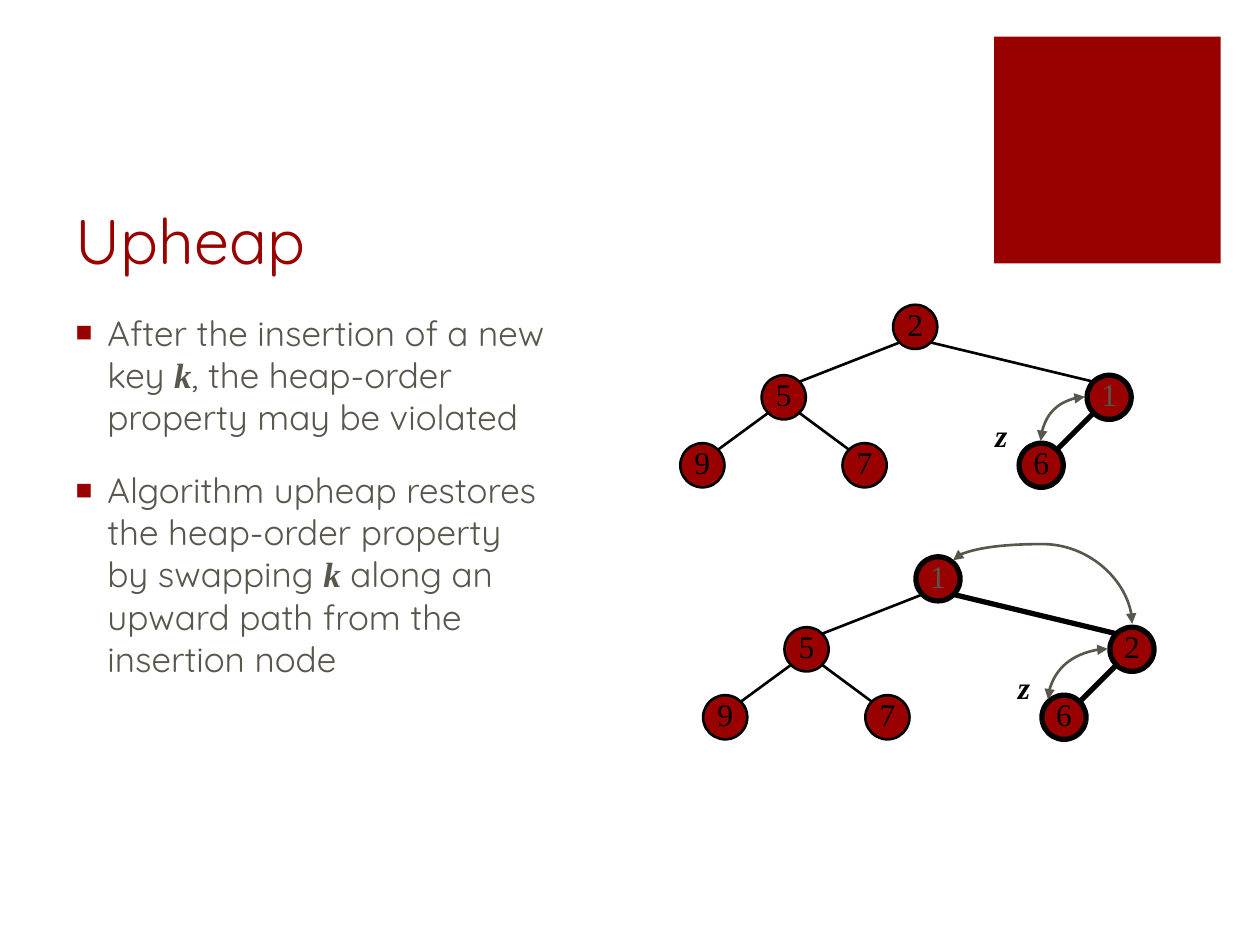
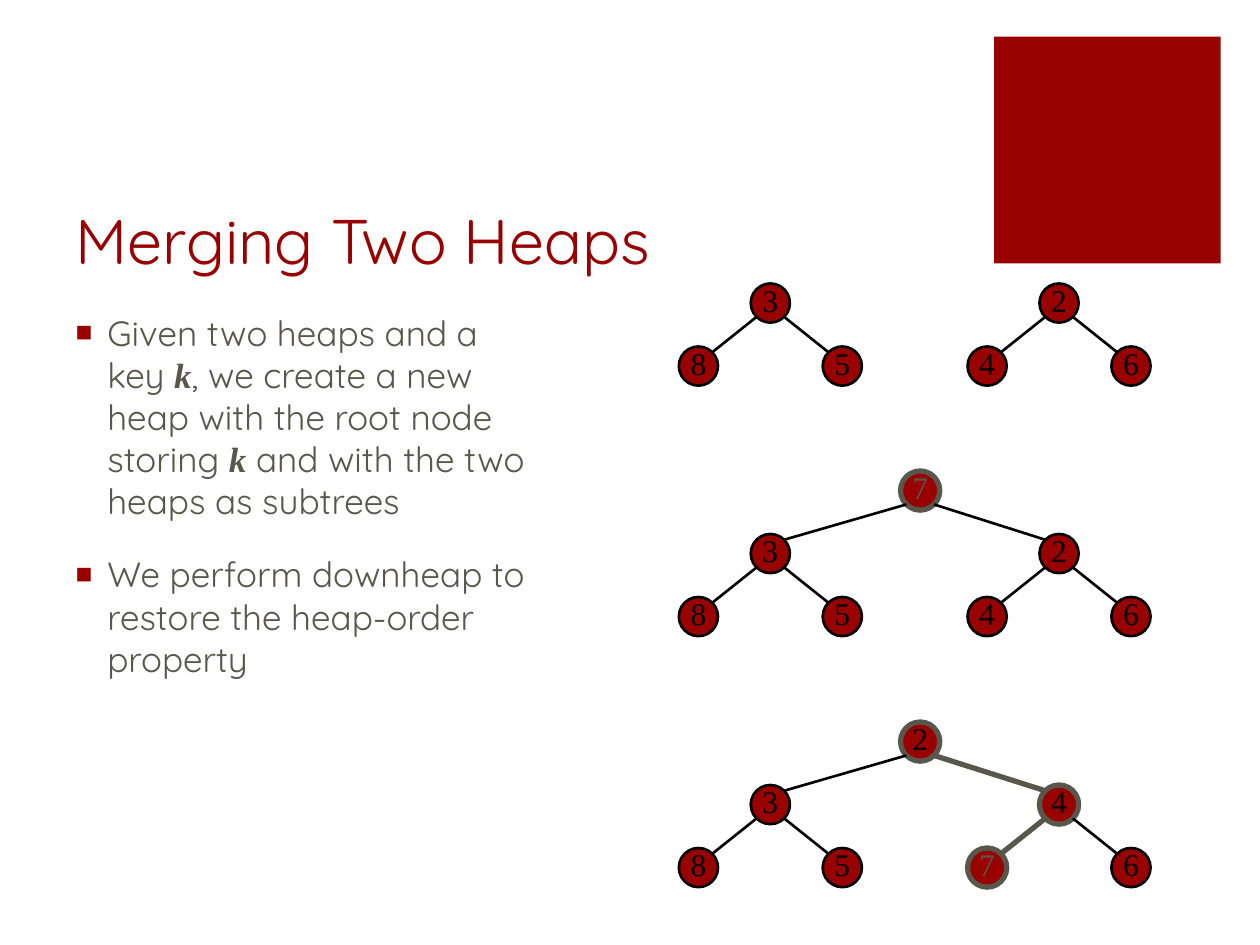
import pptx
import pptx.util
import pptx.dml.color
import pptx.enum.shapes
import pptx.enum.text
import pptx.oxml
import pptx.oxml.ns
import lxml.etree

Cm, Pt = pptx.util.Cm, pptx.util.Pt
qn = pptx.oxml.ns.qn
shape_type = pptx.enum.shapes.MSO_SHAPE
connector_type = pptx.enum.shapes.MSO_CONNECTOR
anchor = pptx.enum.text.MSO_ANCHOR
align = pptx.enum.text.PP_ALIGN
auto_size = pptx.enum.text.MSO_AUTO_SIZE

RED, GREY, BLACK = "990000", "59564B", "000000"


def colour(hex_code):
    return pptx.dml.color.RGBColor.from_string(hex_code)


def set_format(target, values):
    for name, value in values.items():
        setattr(target, name, value)


# Shared formats
title_frame = {"vertical_anchor": anchor.BOTTOM, "auto_size": auto_size.NONE}
body_frame = {"vertical_anchor": anchor.TOP, "auto_size": auto_size.NONE}
node_frame = {"margin_left": 0, "margin_top": 0, "margin_right": 0, "margin_bottom": Cm(0.13),
              "vertical_anchor": anchor.MIDDLE, "word_wrap": False}
label_frame = {"word_wrap": False, "auto_size": auto_size.SHAPE_TO_FIT_TEXT}
title_font = {"name": "Quicksand", "size": Pt(36), "bold": False}
body_font = {"name": "Quicksand", "size": Pt(20)}
key_font = {"name": "Times New Roman", "size": Pt(20), "bold": True, "italic": True}
node_font = {"name": "Times New Roman", "size": Pt(18)}
label_font = {"name": "Times New Roman", "size": Pt(18), "bold": True, "italic": True}

# Slide content. Nodes are numbered in level order, so the parent of n is n // 2.
# "offsets" are node centres from the root; "path" nodes have a thick outline;
# "new" is the node that holds the inserted key. Asterisks enclose the key name.
slides = [
    {
        "title": "Upheap",
        "body_width": 10.03,
        "bullets": [
            "After the insertion of a new key *k*, the heap-order property may be violated",
            "Algorithm upheap restores the heap-order property by swapping *k* along an "
            "upward path from the insertion node",
        ],
        "node_size": 0.89,
        "path_colour": BLACK,
        "offsets": {1: (0, 0), 2: (-2.65, 1.42), 3: (3.91, 1.42),
                    4: (-4.29, 2.79), 5: (-1.02, 2.79), 6: (2.54, 2.79)},
        "heaps": [
            {"root": (18.45, 6.59), "keys": {1: 2, 2: 5, 3: 1, 4: 9, 5: 7, 6: 6},
             "path": {3, 6}, "new": 3},
            {"root": (18.91, 11.67), "keys": {1: 1, 2: 5, 3: 2, 4: 9, 5: 7, 6: 6},
             "path": {1, 3, 6}, "new": 1},
        ],
        "label": ("z", 1.36, 1.67),
        # begin, end, preset, rotation in degrees, adjustment
        "swaps": [
            ((21.87, 8), (20.98, 8.89), "curvedConnector2", 0, None),
            ((21.66, 10.13), (20.38, 13.74), "curvedConnector3", 90, 125600),
            ((22.33, 13.08), (21.13, 14.1), "curvedConnector2", 0, None),
        ],
    },
    {
        "title": "Merging Two Heaps",
        "body_width": 9.93,
        "bullets": [
            "Given two heaps and a key *k*, we create a new heap with the root node "
            "storing *k* and with the two heaps as subtrees",
            "We perform downheap to restore the heap-order property",
        ],
        "node_size": 0.79,
        "path_colour": GREY,
        "offsets": {1: (0, 0), 2: (-3.02, 1.27), 3: (2.8, 1.27),
                    4: (-4.47, 2.54), 5: (-1.57, 2.54), 6: (1.35, 2.54), 7: (4.25, 2.54)},
        "heaps": [
            {"root": (18.55, 4.84), "keys": {2: 3, 3: 2, 4: 8, 5: 5, 6: 4, 7: 6},
             "path": set(), "new": None},
            {"root": (18.55, 9.89), "keys": {1: 7, 2: 3, 3: 2, 4: 8, 5: 5, 6: 4, 7: 6},
             "path": {1}, "new": 1},
            {"root": (18.55, 14.95), "keys": {1: 2, 2: 3, 3: 4, 4: 8, 5: 5, 6: 7, 7: 6},
             "path": {1, 3, 6}, "new": 6},
        ],
        "label": None,
        "swaps": [],
    },
]

deck = pptx.Presentation()
set_format(deck, {"slide_width": Cm(25.4), "slide_height": Cm(19.05)})

for content in slides:
    page = deck.slides.add_slide(deck.slide_layouts[1])

    # Corner square
    square = page.shapes.add_shape(shape_type.RECTANGLE, Cm(20.04), Cm(0.74), Cm(4.57), Cm(4.57))
    square.shadow.inherit = False
    square.fill.solid()
    square.fill.fore_color.rgb = colour(RED)
    square.line.fill.background()

    # Title
    title = page.shapes.title
    set_format(title, {"left": Cm(1.27), "top": Cm(2.54), "width": Cm(18.08), "height": Cm(3.18)})
    set_format(title.text_frame, title_frame)
    para = title.text_frame.paragraphs[0]
    para.alignment = align.LEFT
    span = para.add_run()
    span.text = content["title"]
    set_format(span.font, title_font)
    span.font.color.rgb = colour(RED)

    # Bullet list
    body = page.placeholders[1]
    set_format(body, {"left": Cm(1.27), "top": Cm(6.15),
                      "width": Cm(content["body_width"]), "height": Cm(10.87)})
    set_format(body.text_frame, body_frame)
    for number, bullet in enumerate(content["bullets"]):
        para = body.text_frame.add_paragraph() if number else body.text_frame.paragraphs[0]
        para.space_before = Pt(18)
        properties = para._p.get_or_add_pPr()
        properties.set("marL", str(Cm(0.64)))
        properties.set("indent", str(-Cm(0.64)))
        bullet_colour = lxml.etree.SubElement(properties, qn("a:buClr"))
        lxml.etree.SubElement(bullet_colour, qn("a:srgbClr"), val=RED)
        lxml.etree.SubElement(properties, qn("a:buSzPct"), val="80000")
        lxml.etree.SubElement(properties, qn("a:buChar"), char="■")
        for part, text in enumerate(bullet.split("*")):
            span = para.add_run()
            span.text = text
            set_format(span.font, key_font if part % 2 else body_font)
            span.font.color.rgb = colour(GREY)

    # Heap nodes; tree edges run between the diagonal points of the circles
    size = content["node_size"]
    diagonal = size / 2 * 0.707
    edges = []
    for heap in content["heaps"]:
        root_x, root_y = heap["root"]
        centres = {node: (root_x + dx, root_y + dy)
                   for node, (dx, dy) in content["offsets"].items()}
        for node, key in heap["keys"].items():
            x, y = centres[node]
            on_path = node in heap["path"]
            circle = page.shapes.add_shape(shape_type.OVAL, Cm(x - size / 2), Cm(y - size / 2),
                                           Cm(size), Cm(size))
            circle.shadow.inherit = False
            circle.fill.solid()
            circle.fill.fore_color.rgb = colour(RED)
            circle.line.color.rgb = colour(content["path_colour"] if on_path else BLACK)
            circle.line.width = Pt(3 if on_path else 1.5)
            set_format(circle.text_frame, node_frame)
            para = circle.text_frame.paragraphs[0]
            para.alignment = align.CENTER
            span = para.add_run()
            span.text = str(key)
            set_format(span.font, node_font)
            span.font.color.rgb = colour(GREY if node == heap["new"] else BLACK)

            parent = node // 2
            if parent in heap["keys"]:
                parent_x, parent_y = centres[parent]
                side = diagonal if x > parent_x else -diagonal
                thick = {node, parent} <= heap["path"]
                edges.append(((parent_x + side, parent_y + diagonal), (x - side, y - diagonal),
                              content["path_colour"] if thick else BLACK, 3 if thick else 1.5))

        if content["label"]:
            text, dx, dy = content["label"]
            box = page.shapes.add_textbox(Cm(root_x + dx), Cm(root_y + dy), Cm(0.84), Cm(1.27))
            set_format(box.text_frame, label_frame)
            span = box.text_frame.paragraphs[0].add_run()
            span.text = text
            set_format(span.font, label_font)
            span.font.color.rgb = colour(BLACK)

    # Tree edges and swap arrows
    lines = [(*edge, None, 0, None) for edge in edges]
    lines += [(begin, end, GREY, 1.5, *curve) for begin, end, *curve in content["swaps"]]
    for begin, end, line_colour, width, preset, rotation, adjustment in lines:
        kind = connector_type.CURVE if preset else connector_type.STRAIGHT
        line = page.shapes.add_connector(kind, *map(Cm, begin + end))
        line.line.color.rgb = colour(line_colour)
        line.line.width = Pt(width)
        drawing = line._element.spPr
        lxml.etree.SubElement(drawing, qn("a:effectLst"))
        if preset:
            geometry = drawing.find(qn("a:prstGeom"))
            geometry.set("prst", preset)
            for tip in ("a:headEnd", "a:tailEnd"):
                lxml.etree.SubElement(drawing.find(qn("a:ln")), qn(tip), type="triangle")
        if rotation:
            drawing.find(qn("a:xfrm")).set("rot", str(rotation * 60000))
        if adjustment:
            lxml.etree.SubElement(geometry.find(qn("a:avLst")), qn("a:gd"),
                                  name="adj1", fmla=f"val {adjustment}")

deck.save("out.pptx")
